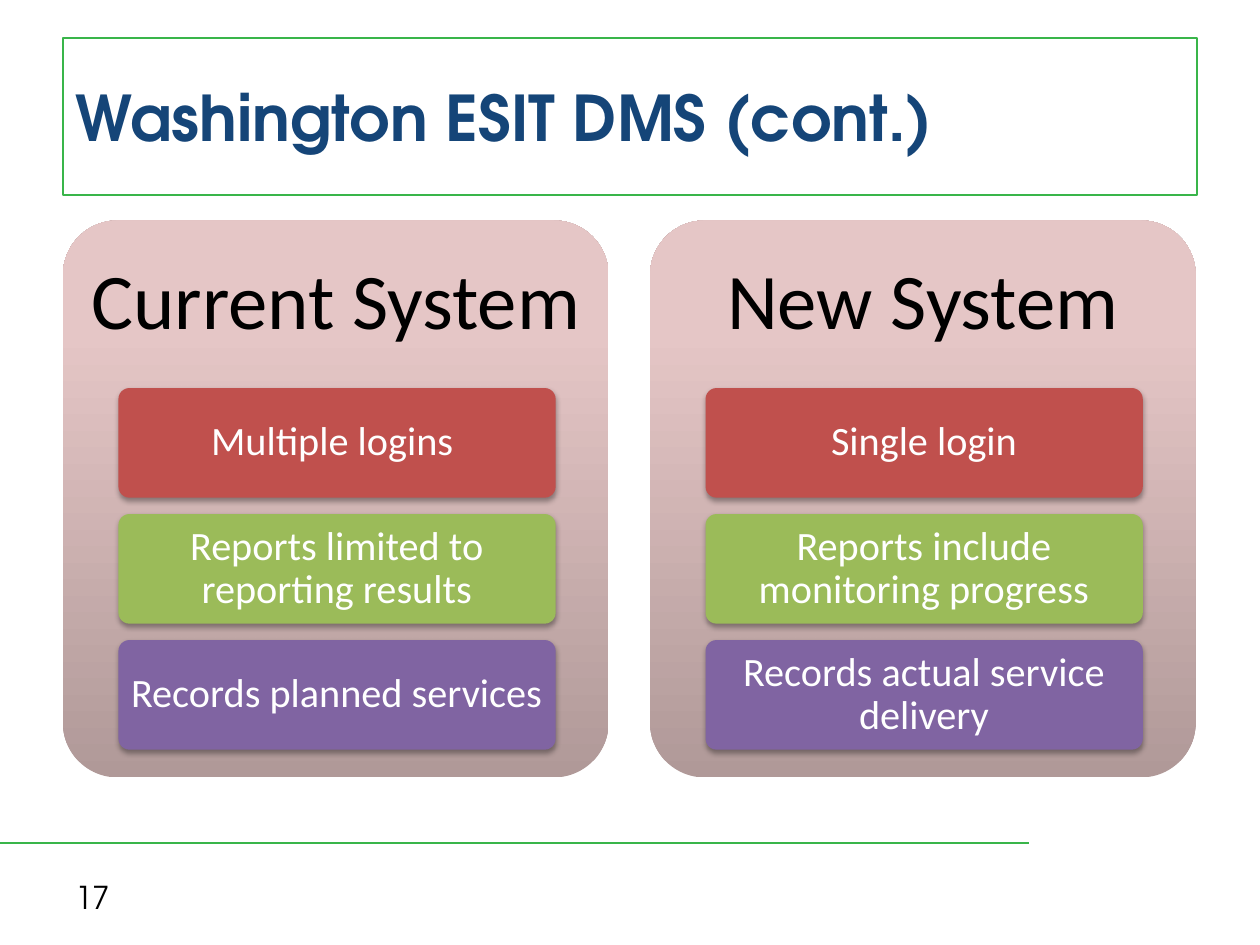
from copy import deepcopy

from lxml import etree
from pptx import Presentation
from pptx.dml.color import RGBColor
from pptx.enum.shapes import MSO_CONNECTOR, MSO_SHAPE
from pptx.enum.text import MSO_ANCHOR, PP_ALIGN
from pptx.oxml.ns import qn
from pptx.util import Inches, Pt

RECT, ROUNDED = MSO_SHAPE.RECTANGLE, MSO_SHAPE.ROUNDED_RECTANGLE
STRAIGHT = MSO_CONNECTOR.STRAIGHT
MIDDLE = MSO_ANCHOR.MIDDLE
LEFT, CENTER = PP_ALIGN.LEFT, PP_ALIGN.CENTER

GREEN_LINE = RGBColor(0x39, 0xB5, 0x4A)
NAVY = RGBColor(0x15, 0x45, 0x78)
BLACK = RGBColor(0x00, 0x00, 0x00)
WHITE = RGBColor(0xFF, 0xFF, 0xFF)
RED = RGBColor(0xC0, 0x50, 0x4D)
GREEN = RGBColor(0x9B, 0xBB, 0x59)
PURPLE = RGBColor(0x80, 0x64, 0xA2)
PANEL_STOPS = [
    (0, RGBColor(0xB0, 0x99, 0x98)),
    (0.8, RGBColor(0xE5, 0xC6, 0xC6)),
    (1, RGBColor(0xE6, 0xC7, 0xC6)),
]

HEAD_FONT, BODY_FONT = "TeX Gyre Adventor", "Calibri"

ITEM_COLORS = [RED, GREEN, PURPLE]
SYSTEMS = [
    ("Current System", ["Multiple logins ",
                        "Reports limited to reporting results",
                        "Records planned services"]),
    ("New System", ["Single login",
                    "Reports include monitoring progress",
                    "Records actual service delivery"]),
]
PANEL_X, PANEL_Y, PANEL_W, PANEL_H = 0.5, 1.75, 4.33, 4.42
PANEL_STEP = 4.66
HEADING_H = 1.32
ITEM_INDENT, ITEM_Y, ITEM_W, ITEM_H = 0.44, 3.08, 3.47, 0.87
ITEM_STEP = 1


class SlideBuilder:
    def __init__(self, slide):
        self.shapes = slide.shapes

    def set_text(self, sp, text, size, color, font=BODY_FONT, align=CENTER,
                 bold=False, margins=(0.1, 0.05), spacing=None):
        """Set one paragraph; margins are (horizontal, vertical) in inches."""
        tf = sp.text_frame
        tf.word_wrap = True
        tf.vertical_anchor = MIDDLE
        tf.margin_left = tf.margin_right = Inches(margins[0])
        tf.margin_top = tf.margin_bottom = Inches(margins[1])
        p = tf.paragraphs[0]
        p.alignment = align
        if spacing:
            p.line_spacing = spacing
        r = p.add_run()
        r.text = text
        r.font.name = font
        r.font.size = Pt(size)
        r.font.bold = bold
        r.font.color.rgb = color

    def box(self, kind, x, y, w, h):
        """Add a shape without line or shadow."""
        sp = self.shapes.add_shape(kind, Inches(x), Inches(y), Inches(w), Inches(h))
        sp.shadow.inherit = False
        sp.line.fill.background()
        if kind == ROUNDED:
            sp.adjustments[0] = 0.1
        return sp

    def text(self, x, y, w, h, text, size, color, **style):
        sp = self.shapes.add_textbox(Inches(x), Inches(y), Inches(w), Inches(h))
        self.set_text(sp, text, size, color, **style)

    def title(self, x, y, w, h, text):
        sp = self.box(RECT, x, y, w, h)
        sp.fill.background()
        sp.line.color.rgb = GREEN_LINE
        sp.line.width = Pt(1)
        self.set_text(sp, text, 36, NAVY, font=HEAD_FONT, align=LEFT, bold=True)

    def rule(self, x1, x2, y):
        line = self.shapes.add_connector(
            STRAIGHT, Inches(x1), Inches(y), Inches(x2), Inches(y))
        line.line.color.rgb = GREEN_LINE
        line.line.width = Pt(1.5)
        etree.SubElement(line._element.spPr, qn("a:effectLst"))

    def panel(self, x, y, w, h):
        """Rounded card shaded from dark at the bottom to light at the top."""
        sp = self.box(ROUNDED, x, y, w, h)
        sp.fill.gradient()
        sp.fill.gradient_angle = 90
        stops = sp._element.spPr.find(".//" + qn("a:gsLst"))
        stops.append(deepcopy(stops[-1]))
        for stop, (position, color) in zip(sp.fill.gradient_stops, PANEL_STOPS):
            stop.position = position
            stop.color.rgb = color

    def item(self, x, y, w, h, text, color):
        sp = self.box(ROUNDED, x, y, w, h)
        sp.fill.solid()
        sp.fill.fore_color.rgb = color
        self.drop_shadow(sp)
        self.set_text(sp, text, 23, WHITE, margins=(0.06, 0.05), spacing=0.9)

    def drop_shadow(self, sp):
        effects = sp._element.spPr.find(qn("a:effectLst"))
        shadow = etree.SubElement(
            effects, qn("a:outerShdw"), blurRad=str(Pt(3.1)), dist=str(Pt(1.8)),
            dir="5400000", rotWithShape="0")
        color = etree.SubElement(shadow, qn("a:srgbClr"), val=str(BLACK))
        etree.SubElement(color, qn("a:alpha"), val="35000")


def main():
    prs = Presentation()
    prs.slide_width, prs.slide_height = Inches(10), Inches(7.5)
    s = SlideBuilder(prs.slides.add_slide(prs.slide_layouts[6]))

    s.rule(0, 8.17, 6.69)
    s.text(0.5, 6.92, 2.33, 0.4, "17", 18, BLACK, font=HEAD_FONT, align=LEFT)
    s.title(0.5, 0.3, 9, 1.25, "Washington ESIT DMS (cont.)")

    for col, (heading, items) in enumerate(SYSTEMS):
        x = PANEL_X + col * PANEL_STEP
        s.panel(x, PANEL_Y, PANEL_W, PANEL_H)
        s.text(x, PANEL_Y, PANEL_W, HEADING_H, heading, 45, BLACK,
               margins=(0.19, 0.19), spacing=0.9)
        for row, (text, color) in enumerate(zip(items, ITEM_COLORS)):
            s.item(x + ITEM_INDENT, ITEM_Y + row * ITEM_STEP,
                   ITEM_W, ITEM_H, text, color)

    prs.save("out.pptx")


if __name__ == "__main__":
    main()
